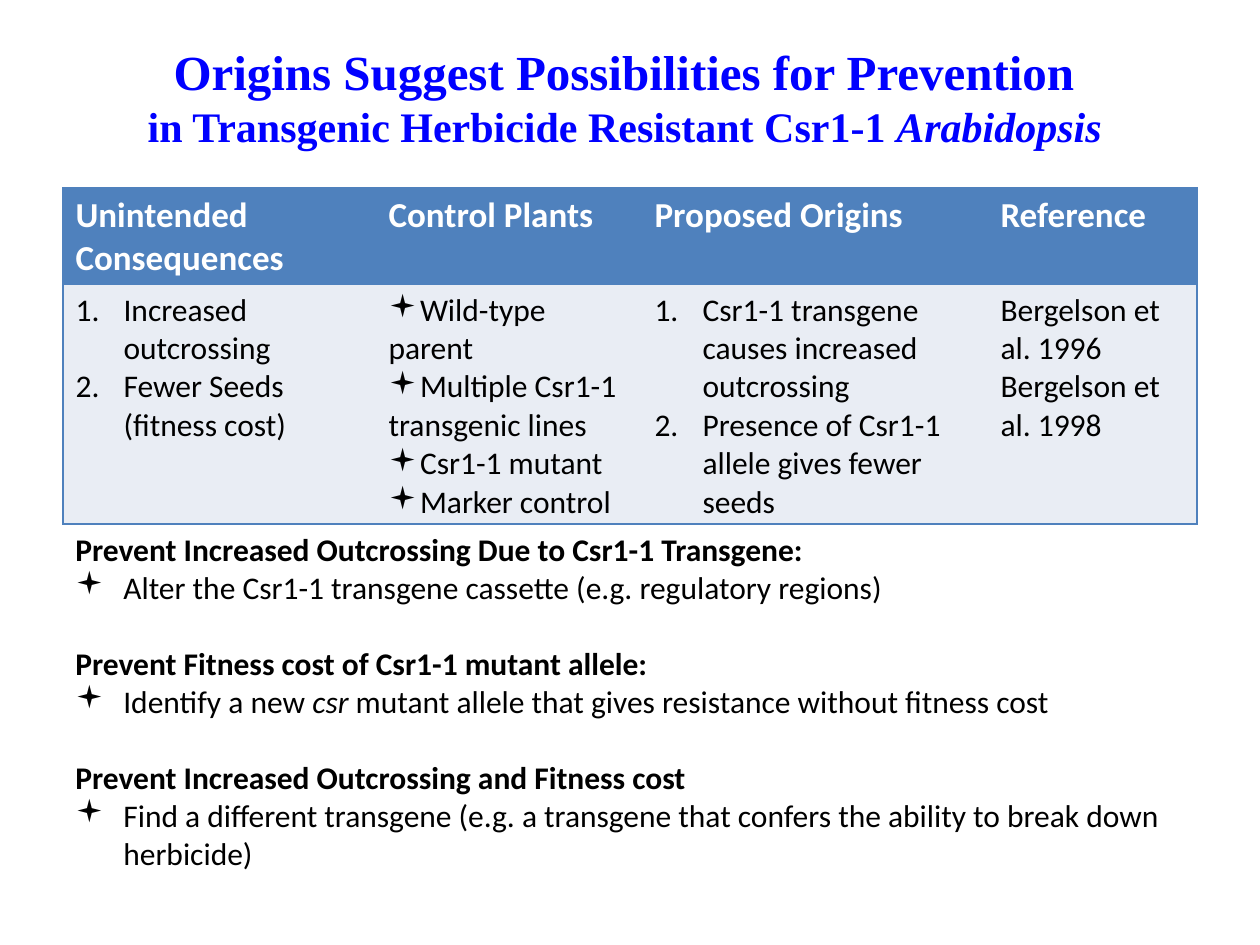
from pptx import Presentation
from pptx.dml.color import RGBColor as RGB
from pptx.enum.text import MSO_ANCHOR as Anchor, PP_ALIGN as Align
from pptx.oxml.ns import qn
from pptx.util import Emu, Pt
from lxml.etree import SubElement as Sub

COLORS = {"title": "0000FF", "head": "4F81BD", "body": "E9EDF4",
          "white": "FFFFFF", "black": "000000"}
NO_STYLE = "{2D5ABB26-0587-4C30-8999-92F81FD0307C}"
INDENT = 48

HEADS = ["Unintended Consequences", "Control Plants", "Proposed Origins", "Reference"]
WIDTHS = [313, 266, 346, 209]
# Each body cell: kind of list and its items
CELLS = [
    ("number", ["Increased outcrossing", "Fewer Seeds (fitness cost)"]),
    ("square", ["Wild-type parent", "Multiple Csr1-1 transgenic lines",
                "Csr1-1 mutant", "Marker control"]),
    ("number", ["Csr1-1 transgene causes increased outcrossing",
                "Presence of Csr1-1 allele gives fewer seeds"]),
    (None, ["Bergelson et al. 1996", "Bergelson et al. 1998"]),
]
# Each way to prevent: heading and the (text, italic) runs of its bullet
WAYS = [
    ("Prevent Increased Outcrossing Due to Csr1-1 Transgene:",
     [("Alter the Csr1-1 transgene cassette (e.g. regulatory regions)", False)]),
    ("Prevent Fitness cost of Csr1-1 mutant allele:",
     [("Identify a new ", False), ("csr", True),
      (" mutant allele that gives resistance without fitness cost", False)]),
    ("Prevent Increased Outcrossing and Fitness cost",
     [("Find a different transgene (e.g. a transgene that confers the ability "
       "to break down herbicide)", False)]),
]


def px(n):
    return Emu(round(n * 914400 / 126))


def style(font, size, color, bold=False, name="Calibri"):
    font.name, font.size, font.bold = name, Pt(size), bold
    font.color.rgb = RGB.from_string(COLORS[color])


def bullet(para, kind, hang=0):
    props = para._p.get_or_add_pPr()
    if hang:
        props.set("marL", str(px(hang)))
        props.set("indent", str(-px(hang)))
    if kind == "number":
        Sub(props, qn("a:buFont"), typeface="+mj-lt")
        Sub(props, qn("a:buAutoNum"), type="arabicPeriod")
    elif kind == "square":
        Sub(props, qn("a:buFont"), typeface="Wingdings")
        Sub(props, qn("a:buChar"), char="▪")


def text_box(slide, box):
    frame = slide.shapes.add_textbox(*map(px, box)).text_frame
    frame.word_wrap = True
    return frame


def title(slide, box):
    frame = text_box(slide, box)
    frame.vertical_anchor = Anchor.MIDDLE
    para = frame.paragraphs[0]
    para.alignment = Align.CENTER
    style(para.font, 24, "title", True, "Times New Roman")
    top = para.add_run()
    top.text = "Origins Suggest Possibilities for Prevention "
    top.font.size = Pt(28)
    para.add_line_break()
    para.add_run().text = "in Transgenic Herbicide Resistant Csr1-1 "
    name = para.add_run()
    name.text = "Arabidopsis "
    name.font.italic = True


def paint(cell, color, sides):
    # Borders come before the fill in the cell's XML
    props = cell._tc.get_or_add_tcPr()
    for side in sides:
        line = Sub(props, qn("a:ln" + side), w=str(Pt(1)))
        Sub(Sub(line, qn("a:solidFill")), qn("a:srgbClr"), val=COLORS["head"])
    cell.fill.solid()
    cell.fill.fore_color.rgb = RGB.from_string(COLORS[color])


def table(slide, box):
    grid = slide.shapes.add_table(2, len(HEADS), *map(px, box)).table
    grid.horz_banding = False
    grid._tbl.tblPr.find(qn("a:tableStyleId")).text = NO_STYLE
    for row, high in zip(grid.rows, (96, 229)):
        row.height = px(high)
    last = len(HEADS) - 1
    for i, (head, wide, (kind, items)) in enumerate(zip(HEADS, WIDTHS, CELLS)):
        grid.columns[i].width = px(wide)
        sides = ("L" if i == 0 else "") + ("R" if i == last else "") + "TB"

        # Header cell
        cell = grid.cell(0, i)
        paint(cell, "head", sides)
        cell.text = head
        style(cell.text_frame.paragraphs[0].font, 20, "white", True)

        # Body cell
        cell = grid.cell(1, i)
        paint(cell, "body", sides)
        cell.text = "\n".join(items)
        for para in cell.text_frame.paragraphs:
            bullet(para, kind, INDENT if kind == "number" else 0)
            style(para.font, 18, "black")


def ways(slide, box):
    frame = text_box(slide, box)
    for i, (head, runs) in enumerate(WAYS):
        para = frame.add_paragraph() if i else frame.paragraphs[0]
        if i:
            para.space_before = Pt(22)
        para.text = head
        style(para.font, 18, "black", True)

        para = frame.add_paragraph()
        bullet(para, "square", INDENT)
        style(para.font, 18, "black")
        for text, slant in runs:
            run = para.add_run()
            run.text = text
            if slant:
                run.font.italic = True


def main():
    deck = Presentation()
    deck.slide_width, deck.slide_height = px(1260), px(945)
    slide = deck.slides.add_slide(deck.slide_layouts[6])
    title(slide, (63, 38, 1134, 116))
    table(slide, (63, 188, 1134, 325))
    ways(slide, (63, 524, 1134, 360))
    deck.save("out.pptx")


if __name__ == "__main__":
    main()
